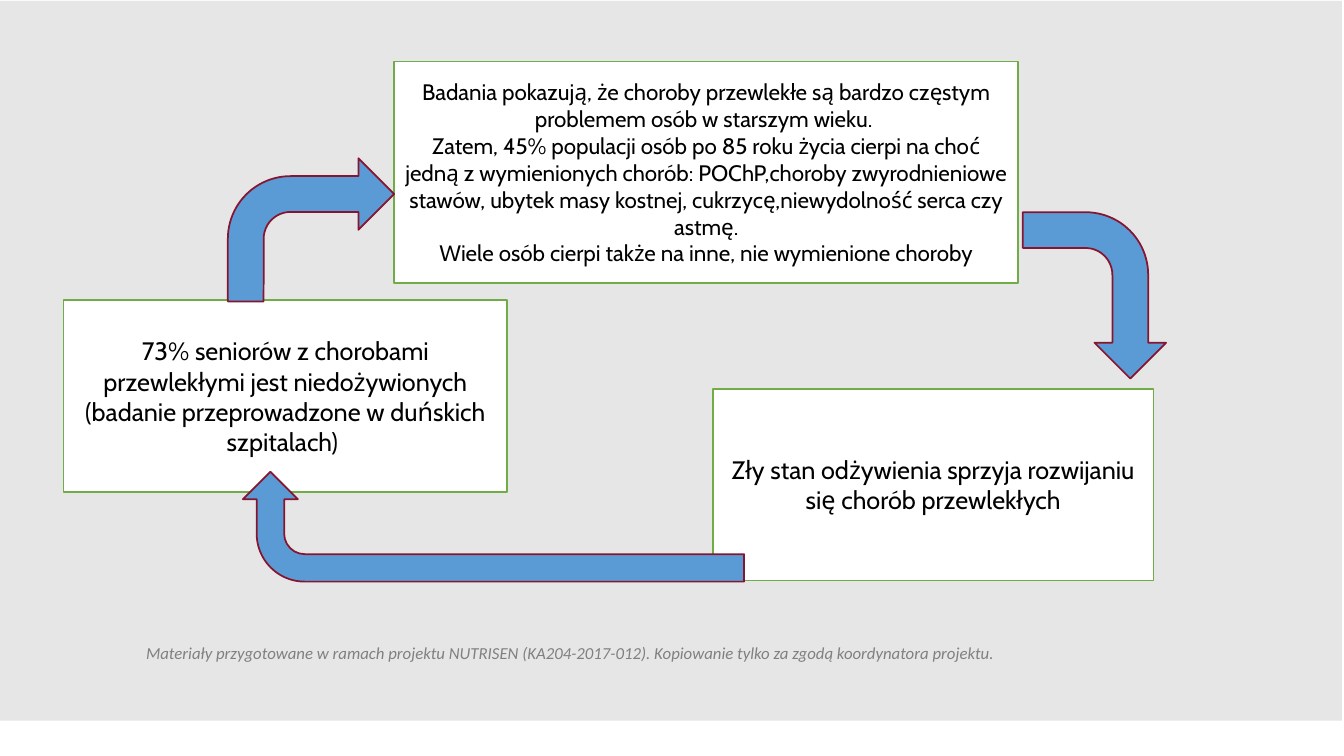
"""Build a slide showing the cycle of chronic disease and malnutrition in seniors."""
from pptx import Presentation
from pptx.dml.color import RGBColor
from pptx.enum.shapes import MSO_SHAPE
from pptx.enum.text import MSO_ANCHOR, PP_ALIGN
from pptx.util import Inches, Pt

COLORS = {
    "panel": "E7E6E6", "box": "FFFFFF", "box_line": "70AD47",
    "arrow": "5B9BD5", "arrow_line": "851530", "text": "000000", "note": "808080",
}


def add_shape(kind, at, fill, line=None, rotation=0):
    sp = slide.shapes.add_shape(kind, *[Inches(v) for v in at])
    sp.shadow.inherit = False
    sp.rotation = rotation
    sp.fill.solid()
    sp.fill.fore_color.rgb = RGBColor.from_string(COLORS[fill])
    if line:
        sp.line.color.rgb = RGBColor.from_string(COLORS[line])
        sp.line.width = Pt(1.25)
    else:
        sp.line.fill.background()
    return sp


def write(sp, paragraphs, font="Cabin", size=18, color="text", italic=False,
          align=PP_ALIGN.CENTER, anchor=MSO_ANCHOR.MIDDLE):
    tf = sp.text_frame
    tf.word_wrap = True
    tf.vertical_anchor = anchor
    for i, text in enumerate(paragraphs):
        p = tf.add_paragraph() if i else tf.paragraphs[0]
        p.alignment = align
        r = p.add_run()
        r.text = text
        r.font.name = font
        r.font.size = Pt(size)
        r.font.italic = italic
        r.font.color.rgb = RGBColor.from_string(COLORS[color])


prs = Presentation()
prs.slide_width, prs.slide_height = Inches(13.33), Inches(7.5)
slide = prs.slides.add_slide(prs.slide_layouts[6])

add_shape(MSO_SHAPE.RECTANGLE, (-0.02, 0.01, 13.33, 7.14), "panel")

boxes = [
    ((0.63, 2.98, 4.4, 1.9), 18, [
        "73% seniorów z chorobami przewlekłymi jest niedożywionych "
        "(badanie przeprowadzone w duńskich szpitalach) "]),
    ((3.91, 0.61, 6.19, 2.2), 16, [
        "Badania pokazują, że choroby przewlekłe są bardzo częstym problemem "
        "osób w starszym wieku. ",
        "Zatem, 45% populacji osób po 85 roku życia cierpi na choć jedną z "
        "wymienionych chorób: POChP,choroby zwyrodnieniowe stawów, ubytek masy "
        "kostnej, cukrzycę,niewydolność serca czy astmę.",
        "Wiele osób cierpi także na inne, nie wymienione choroby"]),
    ((7.07, 3.86, 4.37, 1.9), 18, [
        "Zły stan odżywienia sprzyja rozwijaniu się chorób przewlekłych"]),
]
for at, size, paragraphs in boxes:
    write(add_shape(MSO_SHAPE.RECTANGLE, at, "box", "box_line"), paragraphs, size=size)

arrows = [
    ((10.03, 2.22, 1.65, 1.42), 90),
    ((4.35, 2.74, 1.09, 4.97), 270),
    ((2.26, 1.57, 1.65, 1.42), 0),
]
for at, rotation in arrows:
    add_shape(MSO_SHAPE.BENT_ARROW, at, "arrow", "arrow_line", rotation)

note = slide.shapes.add_textbox(Inches(1.35), Inches(6.33), Inches(11.48), Inches(0.3))
write(note, [
    "Materiały przygotowane w ramach projektu NUTRISEN (KA204-2017-012). "
    "Kopiowanie tylko za zgodą koordynatora projektu."],
    font="Calibri", size=12, color="note", italic=True,
    align=PP_ALIGN.LEFT, anchor=MSO_ANCHOR.TOP)

prs.save("out.pptx")
